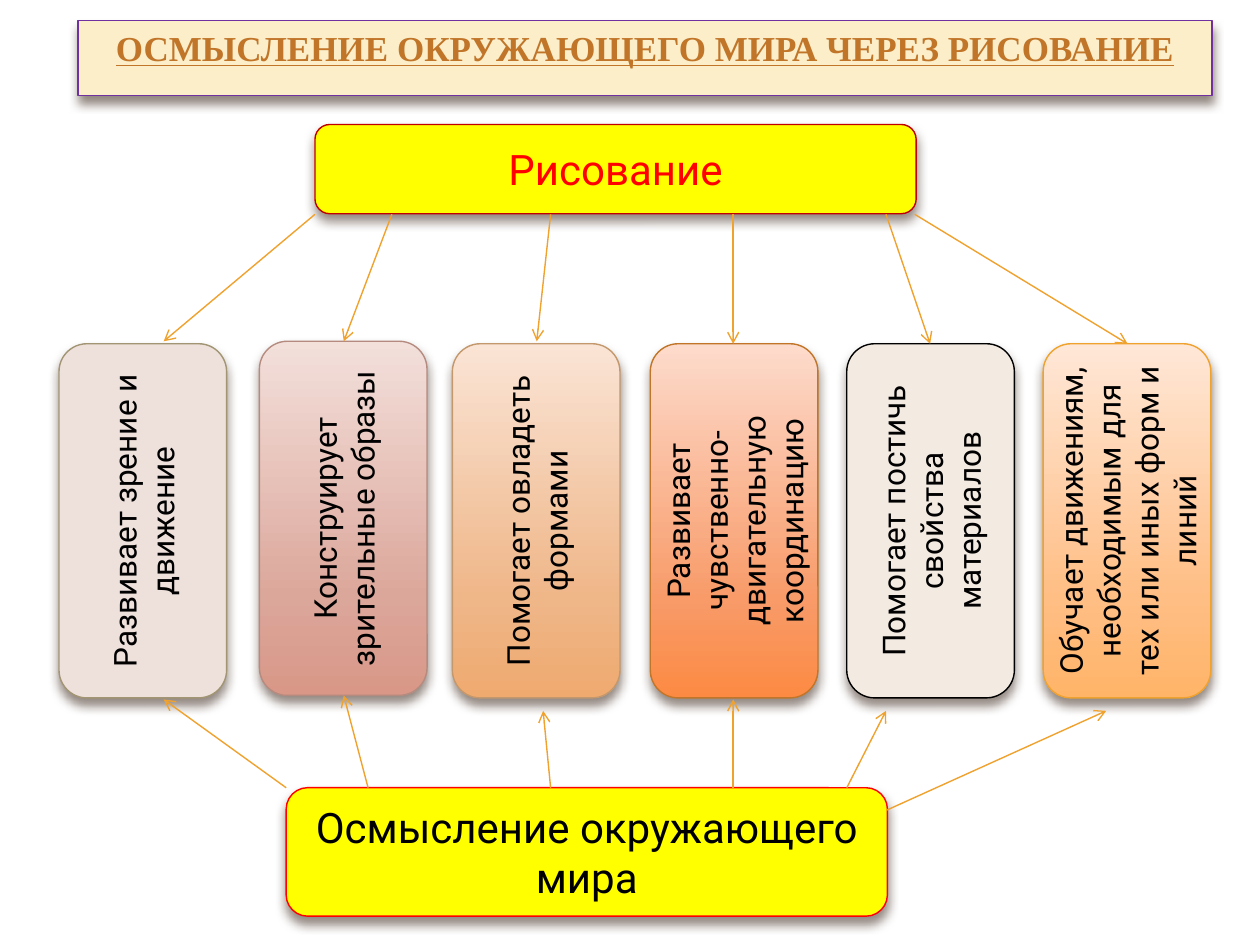
from copy import deepcopy
from dataclasses import dataclass

from lxml import etree
from pptx import Presentation
from pptx.dml.color import RGBColor
from pptx.enum.shapes import MSO_CONNECTOR, MSO_SHAPE
from pptx.enum.text import MSO_ANCHOR, MSO_AUTO_SIZE, PP_ALIGN
from pptx.oxml import parse_xml
from pptx.oxml.ns import nsdecls, qn
from pptx.util import Cm, Pt

ROUNDED = MSO_SHAPE.ROUNDED_RECTANGLE
STRAIGHT = MSO_CONNECTOR.STRAIGHT
CENTER = PP_ALIGN.CENTER
TOP, MIDDLE = MSO_ANCHOR.TOP, MSO_ANCHOR.MIDDLE
TITLE_ONLY = 5


@dataclass(frozen=True)
class Theme:
    title_font: str = "Times New Roman"
    body_font: str = "Roboto"
    title_size: float = 20
    banner_size: float = 24
    card_size: float = 18
    line_width: float = 0.79
    outline_width: float = 1.42
    title_fill: str = "FBEEC9"
    title_line: str = "7030A0"
    title_text: str = "C17529"
    banner_fill: str = "FFFF00"
    text: str = "000000"
    outline: str = "B65B3D"
    arrow: str = "F0A22E"
    shadow: str = "4E3B30"


@dataclass(frozen=True)
class Banner:
    text: str
    left: float
    top: float
    height: float
    color: str
    border: str


@dataclass(frozen=True)
class Card:
    text: str
    left: float
    fill: tuple[str, ...]  # one colour is solid, three make a gradient
    border: str
    top: float = 6.93


@dataclass(frozen=True)
class Arrow:
    x1: float
    y1: float
    x2: float
    y2: float


THEME = Theme()
BANNER_WIDTH = 12.12
CARD_WIDTH, CARD_HEIGHT = 3.38, 7.14
GRADIENT_POSITIONS = (0, 0.72, 1)

BANNERS = (
    Banner("Рисование", 6.35, 2.51, 1.8, "FF0000", "C00000"),
    Banner("Осмысление окружающего мира", 5.77, 15.88, 2.59, THEME.text, "FF0000"),
)
CARDS = (
    Card("Развивает зрение и движение", 1.19, ("EEE0DB",), "A19574"),
    Card("Конструирует зрительные образы", 5.23,
         ("F3E0DB", "DCA79B", "D89787"), "B58B80", top=6.88),
    Card("Помогает овладеть формами", 9.12,
         ("FAE4D5", "EFB688", "EFAA6F"), "C3986D"),
    Card("Развивает чувственно-двигательную координацию", 13.11,
         ("FDDBCC", "F89B69", "FC8A43"), "C17529"),
    Card("Помогает постичь свойства материалов", 17.07, ("F3EAE2",), "000000"),
    Card("Обучает движениям, необходимым для тех или иных форм и линий", 21.03,
         ("FFE7D7", "FFBE84", "FFB468"), "F0A22E"),
)
ARROWS = (
    Arrow(6.35, 4.32, 3.3, 6.88),
    Arrow(7.9, 4.32, 6.93, 6.88),
    Arrow(11.1, 4.32, 10.82, 6.88),
    Arrow(14.78, 4.32, 14.78, 6.93),
    Arrow(17.86, 4.32, 18.75, 6.93),
    Arrow(18.44, 4.32, 22.73, 6.93),
    Arrow(5.77, 15.88, 3.3, 14.1),
    Arrow(7.42, 15.88, 6.93, 14.02),
    Arrow(11.1, 15.88, 10.95, 14.33),
    Arrow(14.78, 15.88, 14.78, 14.1),
    Arrow(17.07, 15.88, 17.86, 14.33),
    Arrow(17.88, 16.33, 22.3, 14.33),
)


def rgb(color: str) -> RGBColor:
    return RGBColor.from_string(color)


def fill_shape(shape, colors: tuple[str, ...]) -> None:
    """Fill with one solid colour or with a gradient from top to bottom."""
    if len(colors) == 1:
        shape.fill.solid()
        shape.fill.fore_color.rgb = rgb(colors[0])
        return
    shape.fill.gradient()
    shape.fill.gradient_angle = 270
    stop_list = shape._element.spPr.find(qn("a:gradFill")).find(qn("a:gsLst"))
    stop_list.append(deepcopy(stop_list[-1]))
    for stop, position, color in zip(shape.fill.gradient_stops, GRADIENT_POSITIONS, colors):
        stop.position = position
        stop.color.rgb = rgb(color)


def style_box(shape, colors: tuple[str, ...], border: str) -> None:
    fill_shape(shape, colors)
    shape.line.color.rgb = rgb(border)
    shape.line.width = Pt(THEME.line_width)
    shape._element.spPr.append(parse_xml(
        f'<a:effectLst {nsdecls("a")}><a:outerShdw blurRad="{Pt(6)}" dist="{Pt(4)}" '
        f'dir="5400000" rotWithShape="0"><a:srgbClr val="{THEME.shadow}">'
        '<a:alpha val="60000"/></a:srgbClr></a:outerShdw></a:effectLst>'))


def write_text(shape, text: str, font_name: str, size: float, color: str, anchor=MIDDLE):
    frame = shape.text_frame
    frame.word_wrap = True
    frame.auto_size = MSO_AUTO_SIZE.NONE
    frame.vertical_anchor = anchor
    paragraph = frame.paragraphs[0]
    paragraph.text = text
    paragraph.alignment = CENTER
    font = paragraph.font
    font.name, font.size, font.color.rgb = font_name, Pt(size), rgb(color)
    return paragraph


def draw_title(slide) -> None:
    title = slide.shapes.title
    title.left, title.top, title.width, title.height = Cm(1.57), Cm(0.41), Cm(22.86), Cm(1.52)
    style_box(title, (THEME.title_fill,), THEME.title_line)
    heading = write_text(title, "ОСМЫСЛЕНИЕ ОКРУЖАЮЩЕГО МИРА ЧЕРЕЗ РИСОВАНИЕ",
                         THEME.title_font, THEME.title_size, THEME.title_text, TOP)
    heading.font.bold = heading.font.underline = True


def draw_banner(slide, banner: Banner) -> None:
    shape = slide.shapes.add_shape(ROUNDED, Cm(banner.left), Cm(banner.top),
                                   Cm(BANNER_WIDTH), Cm(banner.height))
    style_box(shape, (THEME.banner_fill,), banner.border)
    paragraph = write_text(shape, banner.text, THEME.body_font, THEME.banner_size, banner.color)
    paragraph.runs[0]._r.get_or_add_rPr().insert(0, parse_xml(
        f'<a:ln {nsdecls("a")} w="{Pt(THEME.outline_width)}"><a:solidFill>'
        f'<a:srgbClr val="{THEME.outline}"/></a:solidFill></a:ln>'))


def draw_card(slide, card: Card) -> None:
    shape = slide.shapes.add_shape(ROUNDED, Cm(card.left), Cm(card.top),
                                   Cm(CARD_WIDTH), Cm(CARD_HEIGHT))
    style_box(shape, card.fill, card.border)
    write_text(shape, card.text, THEME.body_font, THEME.card_size, THEME.text)
    shape.text_frame._txBody.bodyPr.set("vert", "vert270")


def draw_arrow(slide, arrow: Arrow) -> None:
    connector = slide.shapes.add_connector(STRAIGHT, Cm(arrow.x1), Cm(arrow.y1),
                                           Cm(arrow.x2), Cm(arrow.y2))
    connector.line.color.rgb = rgb(THEME.arrow)
    connector.line.width = Pt(THEME.line_width)
    properties = connector._element.spPr
    etree.SubElement(properties.find(qn("a:ln")), qn("a:tailEnd"), type="arrow")
    etree.SubElement(properties, qn("a:effectLst"))


def main() -> None:
    presentation = Presentation()
    presentation.slide_width, presentation.slide_height = Cm(25.4), Cm(19.05)
    slide = presentation.slides.add_slide(presentation.slide_layouts[TITLE_ONLY])
    draw_title(slide)
    for banner in BANNERS:
        draw_banner(slide, banner)
    for card in CARDS:
        draw_card(slide, card)
    for arrow in ARROWS:
        draw_arrow(slide, arrow)
    presentation.save("out.pptx")


if __name__ == "__main__":
    main()
